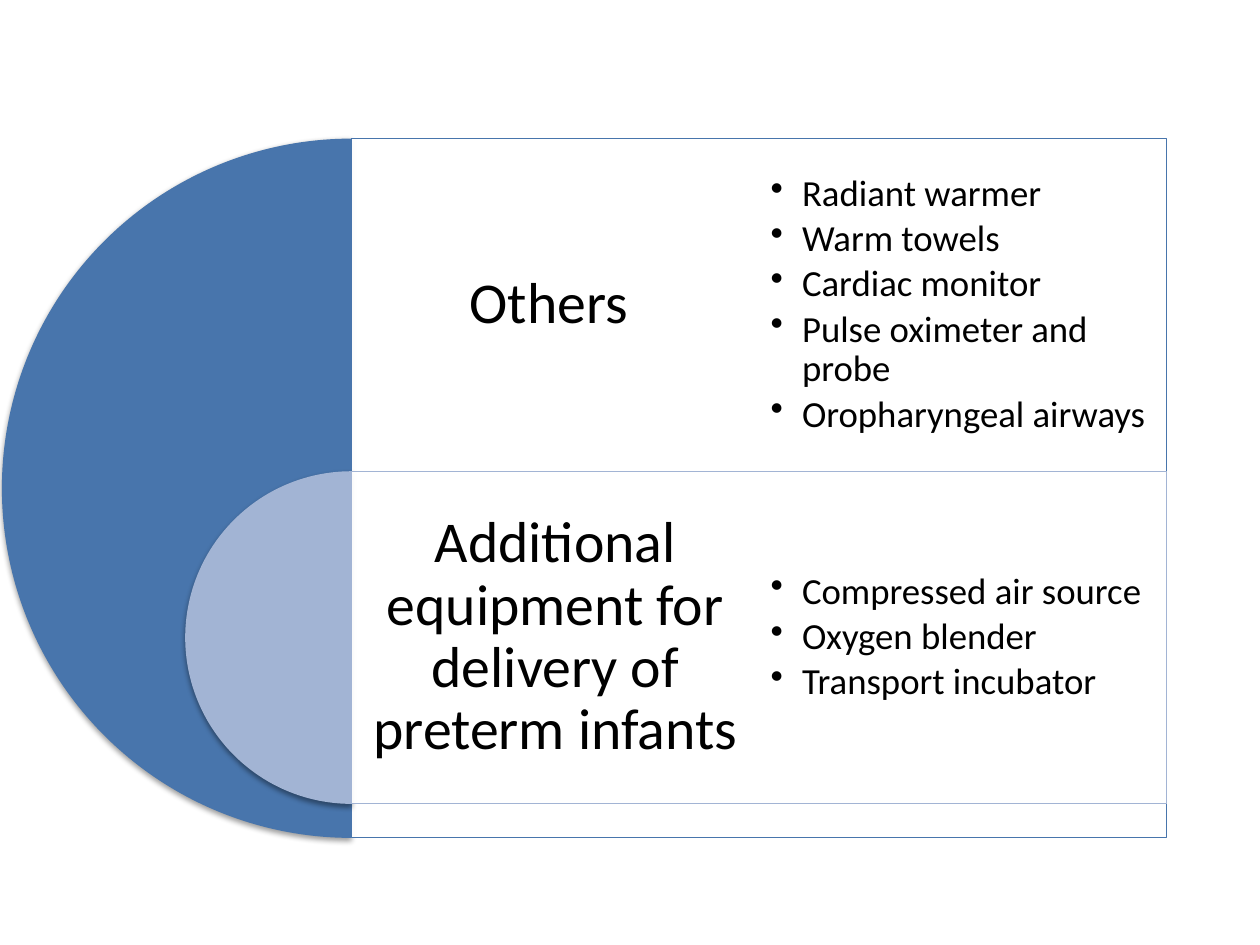
"""Build a slide of nested half circles with equipment lists beside them."""
from lxml.etree import SubElement
from pptx import Presentation
from pptx.dml.color import RGBColor
from pptx.enum.shapes import MSO_SHAPE as SHAPE
from pptx.enum.text import MSO_ANCHOR as ANCHOR, PP_ALIGN as ALIGN
from pptx.oxml.ns import qn
from pptx.util import Inches, Pt

BLACK = RGBColor(0x00, 0x00, 0x00)
WHITE = RGBColor(0xFF, 0xFF, 0xFF)
BLUE = RGBColor(0x48, 0x75, 0xAC)
PALE = RGBColor(0xA2, 0xB4, 0xD4)

SECTIONS = [
    ("Others ", BLUE, 5.55,
     ["Radiant warmer", "Warm towels", "Cardiac monitor",
      "Pulse oximeter and probe", "Oropharyngeal airways"]),
    ("Additional equipment for delivery of preterm infants", PALE, 2.64,
     ["Compressed air source", "Oxygen blender", "Transport incubator"]),
]
LEFT, TOP, WIDTH, ROW_H = 2.79, 1.1, 6.47, 2.64
COL_W = WIDTH / 2


def add_child(parent, tag, **attrs):
    return SubElement(parent, qn(tag), {k: str(v) for k, v in attrs.items()})


def add_shape(s, kind, x, y, w, h, fill):
    sp = s.shapes.add_shape(kind, Inches(x), Inches(y), Inches(w), Inches(h))
    sp.shadow.inherit = False
    sp.fill.solid()
    sp.fill.fore_color.rgb = fill
    return sp


def add_half_circle(s, y, size, color):
    sp = add_shape(s, SHAPE.PIE, LEFT - size / 2, y, size, size, color)
    sp.adjustments[0], sp.adjustments[1] = 54, 162
    sp.line.fill.background()
    effects = sp._element.spPr.find(qn("a:effectLst"))
    shadow = add_child(effects, "a:outerShdw", blurRad=Pt(3.1), dist=Pt(1.6),
                       dir=5400000, rotWithShape=0)
    add_child(add_child(shadow, "a:srgbClr", val=BLACK), "a:alpha", val=38000)


def add_panel(s, y, h, color):
    sp = add_shape(s, SHAPE.RECTANGLE, LEFT, y, WIDTH, h, WHITE)
    fill = sp._element.spPr.find(qn("a:solidFill"))
    add_child(fill.find(qn("a:srgbClr")), "a:alpha", val=90000)
    sp.line.color.rgb = color
    sp.line.width = Pt(0.75)


def add_text(s, x, y, lines, size, inset, gap, bullets=False):
    tf = s.shapes.add_textbox(Inches(x), Inches(y), Inches(COL_W), Inches(ROW_H)).text_frame
    tf.word_wrap = True
    tf.vertical_anchor = ANCHOR.MIDDLE
    tf.margin_left = tf.margin_right = tf.margin_top = tf.margin_bottom = Inches(inset)
    tf.text = "\n".join(lines)
    for p in tf.paragraphs:
        p.alignment = ALIGN.LEFT if bullets else ALIGN.CENTER
        p.line_spacing = 0.9
        p.space_after = Pt(size * gap)
        font = p.runs[0].font
        font.name, font.size, font.color.rgb = "Calibri", Pt(size), BLACK
        if bullets:
            p.level = 1
            pPr = p._p.get_or_add_pPr()
            pPr.set("marL", str(Inches(0.25)))
            pPr.set("indent", str(Inches(-0.25)))
            add_child(pPr, "a:buChar", char="•")


def main():
    prs = Presentation()
    prs.slide_width, prs.slide_height = Inches(10), Inches(7.5)
    s = prs.slides.add_slide(prs.slide_layouts[6])
    for i, (title, color, size, items) in enumerate(SECTIONS):
        y = TOP + i * ROW_H
        add_half_circle(s, y, size, color)
        add_panel(s, y, size, color)
        add_text(s, LEFT, y, [title], 33, 0.14, 0.35)
        add_text(s, LEFT + COL_W, y, items, 21, 0.09, 0.15, bullets=True)
    prs.save("out.pptx")


if __name__ == "__main__":
    main()
